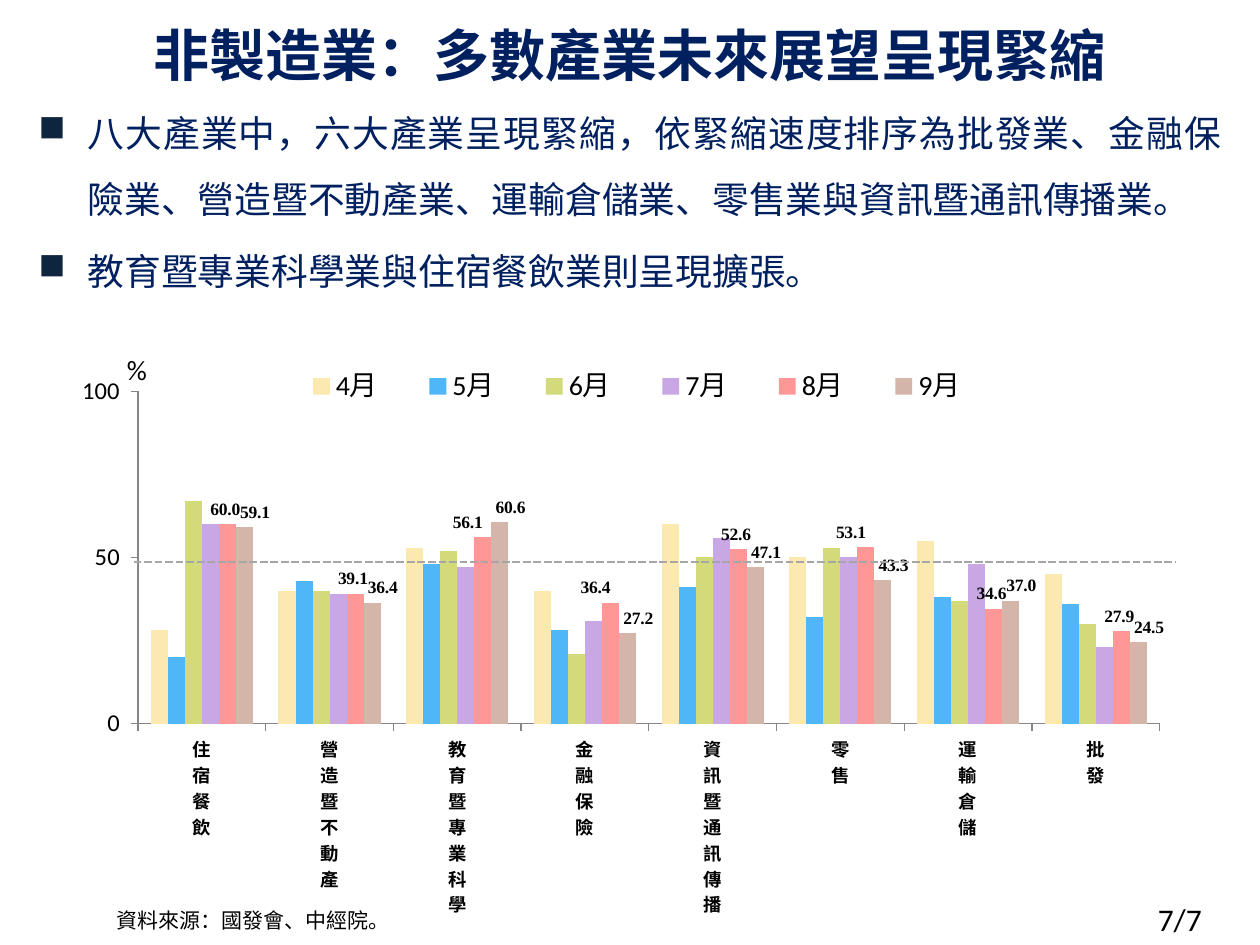
from dataclasses import dataclass
from typing import Optional

from lxml.etree import SubElement
from pptx import Presentation
from pptx.chart.data import CategoryChartData
from pptx.dml.color import RGBColor
from pptx.enum.chart import XL_CHART_TYPE, XL_LABEL_POSITION, XL_LEGEND_POSITION, XL_TICK_MARK
from pptx.enum.dml import MSO_LINE
from pptx.enum.shapes import MSO_CONNECTOR, MSO_SHAPE
from pptx.enum.text import MSO_ANCHOR, PP_ALIGN
from pptx.oxml import parse_xml
from pptx.oxml.ns import nsdecls, qn
from pptx.util import Inches, Pt

CJK = "Noto Sans CJK SC"
NAVY = "002060"
AXIS_GRAY = "868686"


@dataclass(frozen=True)
class Style:
    size: float
    face: str = "Calibri"
    color: str = "000000"
    bold: bool = False


@dataclass(frozen=True)
class Month:
    name: str
    color: str
    values: tuple
    label_shifts: Optional[tuple] = None


@dataclass(frozen=True)
class Note:
    text: str
    box: tuple
    style: Style
    line_spacing: Optional[Pt] = None


INDUSTRIES = ("住宿餐飲", "營造暨不動產", "教育暨專業科學", "金融保險",
              "資訊暨通訊傳播", "零售", "運輸倉儲", "批發")
MONTHS = (
    Month("4月", "FCE9AF", (28, 40, 53, 40, 60, 50, 55, 45)),
    Month("5月", "4FB7F7", (20, 43, 48, 28, 41, 32, 38, 36)),
    Month("6月", "D2DA7A", (67, 40, 52, 21, 50, 53, 37, 30)),
    Month("7月", "C9A6E4", (60, 39, 47, 31, 56, 50, 48, 23)),
    Month("8月", "FF9797", (60, 39.1, 56.1, 36.4, 52.6, 53.1, 34.6, 27.9),
          (0, 0, -0.01, -0.01, 0, -0.01, 0, 0)),
    Month("9月", "D4B5AA", (59.1, 36.4, 60.6, 27.2, 47.1, 43.3, 37, 24.5),
          (0.01,) * len(INDUSTRIES)),
)
FINDINGS = (
    "八大產業中，六大產業呈現緊縮，依緊縮速度排序為批發業、金融保險業、營造暨不動產業、運輸倉儲業、零售業與資訊暨通訊傳播業。",
    "教育暨專業科學業與住宿餐飲業則呈現擴張。",
)
NOTES = (
    Note("7/7", (9.09, 7.09, 0.91, 0.4), Style(18)),
    Note("資料來源：國發會、中經院。", (0.83, 7.19, 9, 0.27),
         Style(12, "Noto Sans CJK JP"), Pt(12)),
    Note("%", (0.91, 2.75, 0.63, 0.37), Style(16)),
)


def rgb(value: str) -> RGBColor:
    return RGBColor.from_string(value)


def inches(box: tuple) -> list:
    return [Inches(length) for length in box]


def apply_style(font, style: Style) -> None:
    font.size = Pt(style.size)
    font.bold = style.bold
    font.color.rgb = rgb(style.color)
    font.name = style.face
    SubElement(font._element, qn("a:ea")).set("typeface", style.face)


def add_run(paragraph, text: str, style: Style) -> None:
    run = paragraph.add_run()
    run.text = text
    apply_style(run.font, style)


def add_note(slide, note: Note) -> None:
    frame = slide.shapes.add_textbox(*inches(note.box)).text_frame
    frame.word_wrap = True
    paragraph = frame.paragraphs[0]
    if note.line_spacing:
        paragraph.line_spacing = note.line_spacing
        paragraph.space_before = Pt(2)
    add_run(paragraph, note.text, note.style)


def set_title(slide, text: str) -> None:
    title = slide.shapes.title
    title.left, title.top, title.width, title.height = inches((0, 0, 10, 0.84))
    title.text_frame.vertical_anchor = MSO_ANCHOR.MIDDLE
    paragraph = title.text_frame.paragraphs[0]
    paragraph.alignment = PP_ALIGN.CENTER
    paragraph.line_spacing = Pt(40)
    add_run(paragraph, text, Style(32, CJK, NAVY, True))


def add_findings(slide) -> None:
    panel = slide.shapes.add_shape(MSO_SHAPE.ROUNDED_RECTANGLE, *inches((0, 0.6, 9.9, 2.2)))
    panel.shadow.inherit = False
    panel.fill.background()
    panel.line.fill.background()
    frame = panel.text_frame
    frame.word_wrap = True
    frame.vertical_anchor = MSO_ANCHOR.TOP
    frame.margin_top = frame.margin_bottom = 0
    for index, finding in enumerate(FINDINGS):
        paragraph = frame.add_paragraph() if index else frame.paragraphs[0]
        paragraph.alignment = PP_ALIGN.JUSTIFY
        paragraph.line_spacing = 1.5
        paragraph.space_before = Pt(3)
        properties = paragraph._p.get_or_add_pPr()
        properties.set("marL", str(Inches(0.49)))
        properties.set("indent", str(Inches(-0.39)))
        bullet_color = SubElement(properties, qn("a:buClr"))
        SubElement(bullet_color, qn("a:srgbClr")).set("val", "0F243E")
        SubElement(properties, qn("a:buChar")).set("char", "■")
        add_run(paragraph, finding, Style(21, CJK, NAVY))


def manual_layout(**settings):
    entries = "".join(f'<c:{key} val="{value}"/>' for key, value in settings.items())
    return parse_xml(f'<c:layout {nsdecls("c")}><c:manualLayout>{entries}'
                     '</c:manualLayout></c:layout>')


def label_points(series, shifts: tuple) -> None:
    style = Style(10, "Times New Roman", bold=True)
    labels = series.data_labels
    labels.show_value = True
    labels.number_format = "0.0_ "
    labels.number_format_is_linked = False
    labels.position = XL_LABEL_POSITION.OUTSIDE_END
    apply_style(labels.font, style)
    for index, shift in enumerate(shifts):
        if shift:
            label = series.points[index].data_label
            label.position = XL_LABEL_POSITION.OUTSIDE_END
            apply_style(label.font, style)
    for element in series._element.xpath("c:dLbls/c:dLbl"):
        shift = shifts[int(element.find(qn("c:idx")).get("val"))]
        element.insert(1, manual_layout(x=shift, y=0))


def format_axis(axis, style: Style) -> None:
    axis.has_major_gridlines = False
    axis.major_tick_mark = XL_TICK_MARK.OUTSIDE
    axis.minor_tick_mark = XL_TICK_MARK.NONE
    axis.format.line.color.rgb = rgb(AXIS_GRAY)
    axis.format.line.width = Pt(0.75)
    apply_style(axis.tick_labels.font, style)


def add_outlook_chart(slide) -> None:
    data = CategoryChartData()
    data.categories = INDUSTRIES
    for month in MONTHS:
        data.add_series(month.name, month.values)
    chart = slide.shapes.add_chart(XL_CHART_TYPE.COLUMN_CLUSTERED,
                                   *inches((-0.2, 2.63, 10.2, 4.65)), data).chart
    chart.has_title = False
    apply_style(chart.font, Style(18))

    plot = chart.plots[0]
    plot.gap_width = 150
    plot.overlap = 0
    plot.vary_by_categories = False
    for series, month in zip(plot.series, MONTHS):
        series.format.fill.solid()
        series.format.fill.fore_color.rgb = rgb(month.color)
        if month.label_shifts:
            label_points(series, month.label_shifts)

    format_axis(chart.category_axis, Style(10.5, CJK, bold=True))
    text_body = chart.category_axis._element.find(qn("c:txPr")).find(qn("a:bodyPr"))
    text_body.set("rot", "0")
    text_body.set("vert", "wordArtVert")
    percent_axis = chart.value_axis
    format_axis(percent_axis, Style(14))
    percent_axis.minimum_scale, percent_axis.maximum_scale = 0, 100
    percent_axis.major_unit = 50
    percent_axis.tick_labels.number_format = r"0_ ;[Red]\-0\ "
    percent_axis.tick_labels.number_format_is_linked = False

    chart.has_legend = True
    legend = chart.legend
    legend.position = XL_LEGEND_POSITION.TOP
    legend.include_in_layout = False
    apply_style(legend.font, Style(16))
    for layout in legend._element.findall(qn("c:layout")):
        legend._element.remove(layout)
    legend._element.find(qn("c:legendPos")).addnext(
        manual_layout(xMode="edge", yMode="edge", x=0.23, y=0.06, w=0.57, h=0.07))

    plot_area = chart._chartSpace.chart.plotArea
    for layout in plot_area.findall(qn("c:layout")):
        plot_area.remove(layout)
    plot_area.insert(0, manual_layout(layoutTarget="inner", xMode="edge", yMode="edge",
                                      x=0.127, y=0.104, w=0.795, h=0.574))


def add_threshold(slide) -> None:
    threshold = slide.shapes.add_connector(MSO_CONNECTOR.STRAIGHT,
                                           *inches((1.06, 4.46, 9.33, 4.46)))
    threshold.line.color.rgb = rgb("A6A6A6")
    threshold.line.width = Pt(1.5)
    threshold.line.dash_style = MSO_LINE.SQUARE_DOT
    SubElement(threshold._element.spPr, qn("a:effectLst"))


def main() -> None:
    deck = Presentation()
    deck.slide_width, deck.slide_height = inches((10, 7.5))
    slide = deck.slides.add_slide(deck.slide_layouts[5])
    set_title(slide, "非製造業：多數產業未來展望呈現緊縮")
    add_findings(slide)
    add_outlook_chart(slide)
    for note in NOTES:
        add_note(slide, note)
    add_threshold(slide)
    deck.save("out.pptx")


if __name__ == "__main__":
    main()
